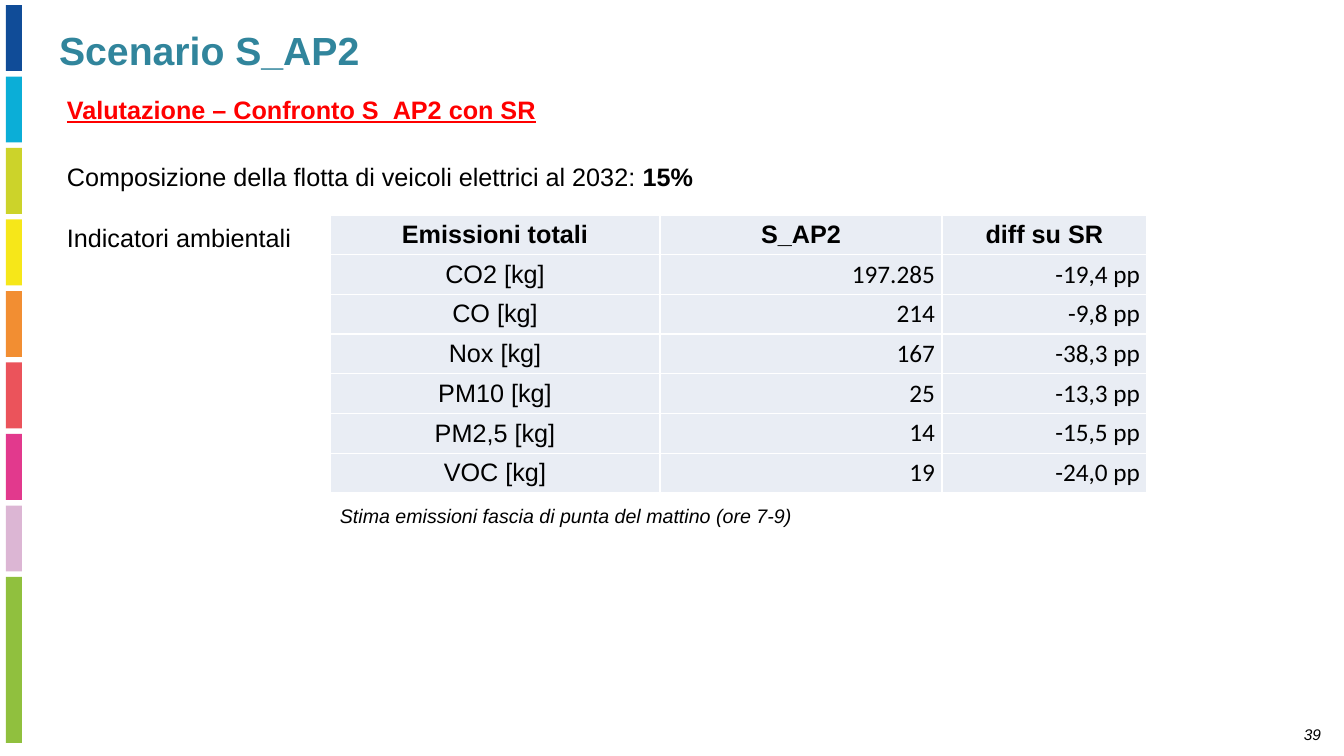
from lxml import etree
from pptx import Presentation
from pptx.dml.color import RGBColor
from pptx.enum.shapes import MSO_SHAPE
from pptx.enum.text import MSO_ANCHOR, MSO_AUTO_SIZE, PP_ALIGN
from pptx.oxml.ns import qn
from pptx.util import Emu, Pt

RECTANGLE = MSO_SHAPE.RECTANGLE
TOP, MIDDLE = MSO_ANCHOR.TOP, MSO_ANCHOR.MIDDLE
NO_FIT = MSO_AUTO_SIZE.NONE
LEFT, CENTER, RIGHT = PP_ALIGN.LEFT, PP_ALIGN.CENTER, PP_ALIGN.RIGHT

SLIDE_SIZE = (1344, 756)
TITLE_ONLY = 5
COLORS = {
    "title": "31859C", "heading": "FF0000", "text": "000000",
    "cell": "E9EDF4", "border": "FFFFFF",
    "blue": "104C98", "cyan": "0BAED7", "lime": "CCD32A",
    "yellow": "F6E719", "orange": "F28E32", "coral": "EB535B",
    "magenta": "E2398D", "lilac": "DCB6D4", "green": "90C03E",
}
STRIPES = ["blue", "cyan", "lime", "yellow", "orange", "coral",
           "magenta", "lilac", "green"]
EMISSIONS = [
    ("Emissioni totali", "S_AP2", "diff su SR"),
    ("CO2 [kg]", "197.285", "-19,4 pp"),
    ("CO [kg]", "214", "-9,8 pp"),
    ("Nox [kg]", "167", "-38,3 pp"),
    ("PM10 [kg]", "25", "-13,3 pp"),
    ("PM2,5 [kg]", "14", "-15,5 pp"),
    ("VOC [kg]", "19", "-24,0 pp"),
]


def px(length):
    """Turn slide pixels into EMU."""
    return Emu(round(length * 914400 / 100.8))


def write(frame, runs, align=LEFT, color="text", **formats):
    """Fill the first paragraph with (text, bold) runs in one format."""
    paragraph = frame.paragraphs[0]
    paragraph.alignment = align
    for words, bold in runs:
        run = paragraph.add_run()
        run.text = words
        values = {"name": "Arial", "size": Pt(18), "bold": bold, **formats}
        for key, value in values.items():
            setattr(run.font, key, value)
        run.font.color.rgb = RGBColor.from_string(COLORS[color])


def add_stripes(slide, box):
    """Stack the coloured stripes, the last one reaching the box's bottom."""
    left, top, width, height = box
    last_top = 572
    for index, color in enumerate(STRIPES):
        offset = last_top * index / (len(STRIPES) - 1)
        is_last = index == len(STRIPES) - 1
        stripe = slide.shapes.add_shape(
            RECTANGLE, px(left), px(top + offset), px(width),
            px(height - last_top if is_last else 66))
        stripe.shadow.inherit = False
        stripe.fill.solid()
        stripe.fill.fore_color.rgb = RGBColor.from_string(COLORS[color])
        stripe.line.fill.background()


def add_title(slide, box, words):
    """Place the slide title in its placeholder."""
    title = slide.shapes.title
    title.left, title.top, title.width, title.height = map(px, box)
    frame = title.text_frame
    frame.auto_size = NO_FIT
    frame.vertical_anchor = TOP
    write(frame, [(words, True)], color="title", size=Pt(28))


def add_text(slide, box, runs, **formats):
    """Place a wrapping line of text in the box."""
    frame = slide.shapes.add_textbox(*map(px, box)).text_frame
    frame.word_wrap = True
    write(frame, runs, **formats)


def format_cell(cell, is_number):
    """Give a table cell its margins, white borders and fill."""
    side = px(7 if is_number else 1)
    values = {"margin_left": side, "margin_right": side, "margin_top": 0,
              "margin_bottom": 0, "vertical_anchor": MIDDLE}
    for key, value in values.items():
        setattr(cell, key, value)
    properties = cell._tc.get_or_add_tcPr()
    for edge in ("a:lnL", "a:lnR", "a:lnT", "a:lnB"):
        line = etree.SubElement(properties, qn(edge), w=str(Pt(1)))
        fill = etree.SubElement(line, qn("a:solidFill"))
        etree.SubElement(fill, qn("a:srgbClr"), val=COLORS["border"])
    cell.fill.solid()
    cell.fill.fore_color.rgb = RGBColor.from_string(COLORS["cell"])


def add_emissions(slide, box):
    """Draw the emissions table with equal rows."""
    height = box[3]
    table = slide.shapes.add_table(
        len(EMISSIONS), len(EMISSIONS[0]), *map(px, box)).table
    table.first_row = table.horz_banding = False
    for column, width in zip(table.columns, (330, 282, 205)):
        column.width = px(width)
    for row_index, values in enumerate(EMISSIONS):
        table.rows[row_index].height = px(height / len(EMISSIONS))
        for column_index, value in enumerate(values):
            is_number = row_index > 0 and column_index > 0
            cell = table.cell(row_index, column_index)
            format_cell(cell, is_number)
            write(cell.text_frame, [(value, row_index == 0)],
                  align=RIGHT if is_number else CENTER,
                  name="Calibri" if is_number else "Arial")


def add_assessment(slide, box):
    """Place the heading, fleet share, indicators and table note."""
    left, top, width, height = box
    add_text(slide, (left, top, width, 40),
             [("Valutazione – Confronto S_AP2 con SR", True)],
             color="heading", underline=True)
    add_text(slide, (left, top + 67, 764, 40),
             [("Composizione della flotta di veicoli elettrici al 2032: ", False),
              ("15%", True)])
    add_text(slide, (left, top + 128, 260, 40),
             [("Indicatori ambientali", False)])
    add_emissions(slide, (left + 273, top + 126, 817, 278))
    add_text(slide, (left + 273, top + height - 34, 671, 34),
             [("Stima emissioni fascia di punta del mattino (ore 7-9)", False)],
             size=Pt(14), italic=True)


def main():
    """Build and save the scenario slide."""
    deck = Presentation()
    deck.slide_width, deck.slide_height = map(px, SLIDE_SIZE)
    slide = deck.slides.add_slide(deck.slide_layouts[TITLE_ONLY])
    add_stripes(slide, (6, 5, 16, 738))
    add_title(slide, (49, 21, 1186, 57), "Scenario S_AP2")
    add_assessment(slide, (57, 89, 1261, 444))
    add_text(slide, (1212, 720, 119, 29), [("39", False)],
             align=RIGHT, size=Pt(11), italic=True)
    deck.save("out.pptx")


if __name__ == "__main__":
    main()
